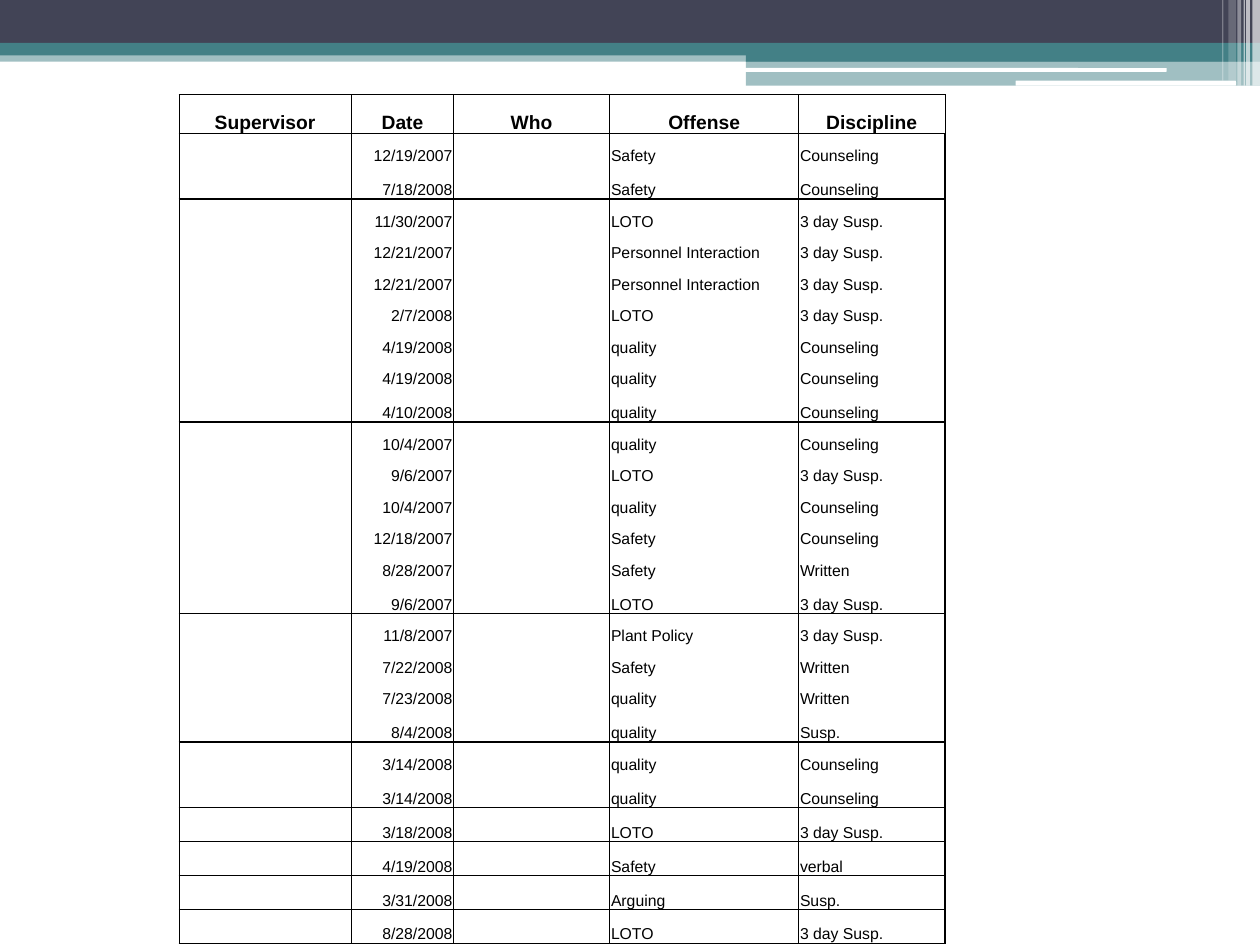
from lxml import etree
from pptx import Presentation
from pptx.dml.color import RGBColor
from pptx.enum.shapes import MSO_SHAPE
from pptx.enum.text import MSO_ANCHOR, PP_ALIGN
from pptx.oxml.ns import qn
from pptx.util import Inches, Pt

RECTANGLE, ROUNDED = MSO_SHAPE.RECTANGLE, MSO_SHAPE.ROUNDED_RECTANGLE
LEFT, CENTER, RIGHT = PP_ALIGN.LEFT, PP_ALIGN.CENTER, PP_ALIGN.RIGHT
BOTTOM = MSO_ANCHOR.BOTTOM
BLACK = RGBColor(0x00, 0x00, 0x00)
WHITE = RGBColor(0xFF, 0xFF, 0xFF)
NAVY = RGBColor(0x42, 0x44, 0x56)
TEAL = RGBColor(0x43, 0x80, 0x86)

BANNER = [
    (RECTANGLE, 0, 0.4, 10, 0.09, TEAL, 50),
    (RECTANGLE, 0, 0, 10, 0.34, NAVY, 100),
    (RECTANGLE, 0, 0.34, 10, 0.1, TEAL, 100),
    (RECTANGLE, 5.92, 0.39, 4.08, 0.1, TEAL, 100),
    (RECTANGLE, 5.92, 0.48, 4.08, 0.2, TEAL, 50),
    (ROUNDED, 5.91, 0.54, 3.35, 0.03, WHITE, 100),
    (ROUNDED, 8.06, 0.64, 1.75, 0.04, WHITE, 100),
    (RECTANGLE, 9.94, 0, 0.06, 0.68, WHITE, 65),
    (RECTANGLE, 9.89, 0, 0.03, 0.68, WHITE, 65),
    (RECTANGLE, 9.87, 0, 0.01, 0.68, WHITE, 60),
    (RECTANGLE, 9.82, 0, 0.03, 0.68, WHITE, 40),
    (RECTANGLE, 9.75, 0, 0.06, 0.64, WHITE, 20),
    (RECTANGLE, 9.7, 0, 0.01, 0.64, WHITE, 30),
]

COLUMNS = [("Supervisor", 1.37, LEFT), ("Date", 0.81, RIGHT), ("Who", 1.24, LEFT),
           ("Offense", 1.5, LEFT), ("Discipline", 1.16, LEFT)]
SUPERVISOR_GROUPS = [
    [("12/19/2007", "Safety", "Counseling"),
     ("7/18/2008", "Safety", "Counseling")],
    [("11/30/2007", "LOTO", "3 day Susp."),
     ("12/21/2007", "Personnel Interaction", "3 day Susp."),
     ("12/21/2007", "Personnel Interaction", "3 day Susp."),
     ("2/7/2008", "LOTO", "3 day Susp."),
     ("4/19/2008", "quality", "Counseling"),
     ("4/19/2008", "quality", "Counseling"),
     ("4/10/2008", "quality", "Counseling")],
    [("10/4/2007", "quality", "Counseling"),
     ("9/6/2007", "LOTO", "3 day Susp."),
     ("10/4/2007", "quality", "Counseling"),
     ("12/18/2007", "Safety", "Counseling"),
     ("8/28/2007", "Safety", "Written"),
     ("9/6/2007", "LOTO", "3 day Susp.")],
    [("11/8/2007", "Plant Policy", "3 day Susp."),
     ("7/22/2008", "Safety", "Written"),
     ("7/23/2008", "quality", "Written"),
     ("8/4/2008", "quality", "Susp.")],
    [("3/14/2008", "quality", "Counseling"),
     ("3/14/2008", "quality", "Counseling")],
    [("3/18/2008", "LOTO", "3 day Susp.")],
    [("4/19/2008", "Safety", "verbal")],
    [("3/31/2008", "Arguing", "Susp.")],
    [("8/28/2008", "LOTO", "3 day Susp.")],
]
TABLE_LEFT, TABLE_TOP = 1.42, 0.75
HEADER_HEIGHT, ROW_HEIGHT, GROUP_END_HEIGHT = 0.31, 0.25, 0.27
THIN, THICK = 0.5, 1
CELL_FORMAT = {"vertical_anchor": BOTTOM, "margin_left": Inches(0.01),
               "margin_right": Inches(0.01), "margin_top": Inches(0.01),
               "margin_bottom": 0}
HEADER_FONT = {"name": "Arial", "size": Pt(11), "bold": True}
BODY_FONT = {"name": "Arial", "size": Pt(9), "bold": False}


def apply_format(target, values):
    for name, value in values.items():
        setattr(target, name, value)


def add_banner_shape(slide, kind, left, top, width, height, color, opacity):
    shape = slide.shapes.add_shape(
        kind, Inches(left), Inches(top), Inches(width), Inches(height))
    shape.shadow.inherit = False
    shape.line.fill.background()
    shape.fill.solid()
    shape.fill.fore_color.rgb = color
    if opacity < 100:
        color_element = shape.fill._xPr.find(".//" + qn("a:srgbClr"))
        etree.SubElement(color_element, qn("a:alpha"), val=str(opacity * 1000))


def set_borders(cell, widths):
    properties = cell._tc.get_or_add_tcPr()
    for side, width in zip("LRTB", widths):
        line = etree.SubElement(properties, qn(f"a:ln{side}"), w=str(Pt(width)))
        if width:
            fill = etree.SubElement(line, qn("a:solidFill"))
            etree.SubElement(fill, qn("a:srgbClr"), val=str(BLACK))
        else:
            etree.SubElement(line, qn("a:noFill"))


def fill_cell(cell, text, alignment, font_format, borders):
    apply_format(cell, CELL_FORMAT)
    set_borders(cell, borders)
    cell.fill.background()
    paragraph = cell.text_frame.paragraphs[0]
    paragraph.alignment = alignment
    if text:
        run = paragraph.add_run()
        run.text = text
        apply_format(run.font, font_format)
        run.font.color.rgb = BLACK
    else:
        size = str(int(font_format["size"].pt * 100))
        etree.SubElement(paragraph._p, qn("a:endParaRPr"), sz=size)


def table_rows():
    headings = [heading for heading, _, _ in COLUMNS]
    yield headings, HEADER_HEIGHT, THIN, THIN
    top = THIN
    for group in SUPERVISOR_GROUPS:
        for index, (date, offense, discipline) in enumerate(group):
            is_last = index == len(group) - 1
            height = GROUP_END_HEIGHT if is_last else ROW_HEIGHT
            bottom = THICK if is_last else 0
            yield ["", date, "", offense, discipline], height, top, bottom
            top = bottom


def add_discipline_table(slide):
    rows = list(table_rows())
    width = sum(column_width for _, column_width, _ in COLUMNS)
    height = sum(row_height for _, row_height, _, _ in rows)
    table = slide.shapes.add_table(
        len(rows), len(COLUMNS), Inches(TABLE_LEFT), Inches(TABLE_TOP),
        Inches(width), Inches(height)).table
    apply_format(table, {"first_row": False, "horz_banding": False})
    for column, (_, column_width, _) in zip(table.columns, COLUMNS):
        column.width = Inches(column_width)
    for row_index, (texts, row_height, top, bottom) in enumerate(rows):
        table.rows[row_index].height = Inches(row_height)
        is_header = row_index == 0
        font_format = HEADER_FONT if is_header else BODY_FONT
        for column_index, text in enumerate(texts):
            is_outer = column_index == len(COLUMNS) - 1 and not is_header
            right = THICK if is_outer else THIN
            alignment = CENTER if is_header else COLUMNS[column_index][2]
            fill_cell(table.cell(row_index, column_index), text, alignment,
                      font_format, (THIN, right, top, bottom))


def main():
    presentation = Presentation()
    presentation.slide_width, presentation.slide_height = Inches(10), Inches(7.5)
    slide = presentation.slides.add_slide(presentation.slide_layouts[6])
    for banner_shape in BANNER:
        add_banner_shape(slide, *banner_shape)
    add_discipline_table(slide)
    presentation.save("out.pptx")


if __name__ == "__main__":
    main()
